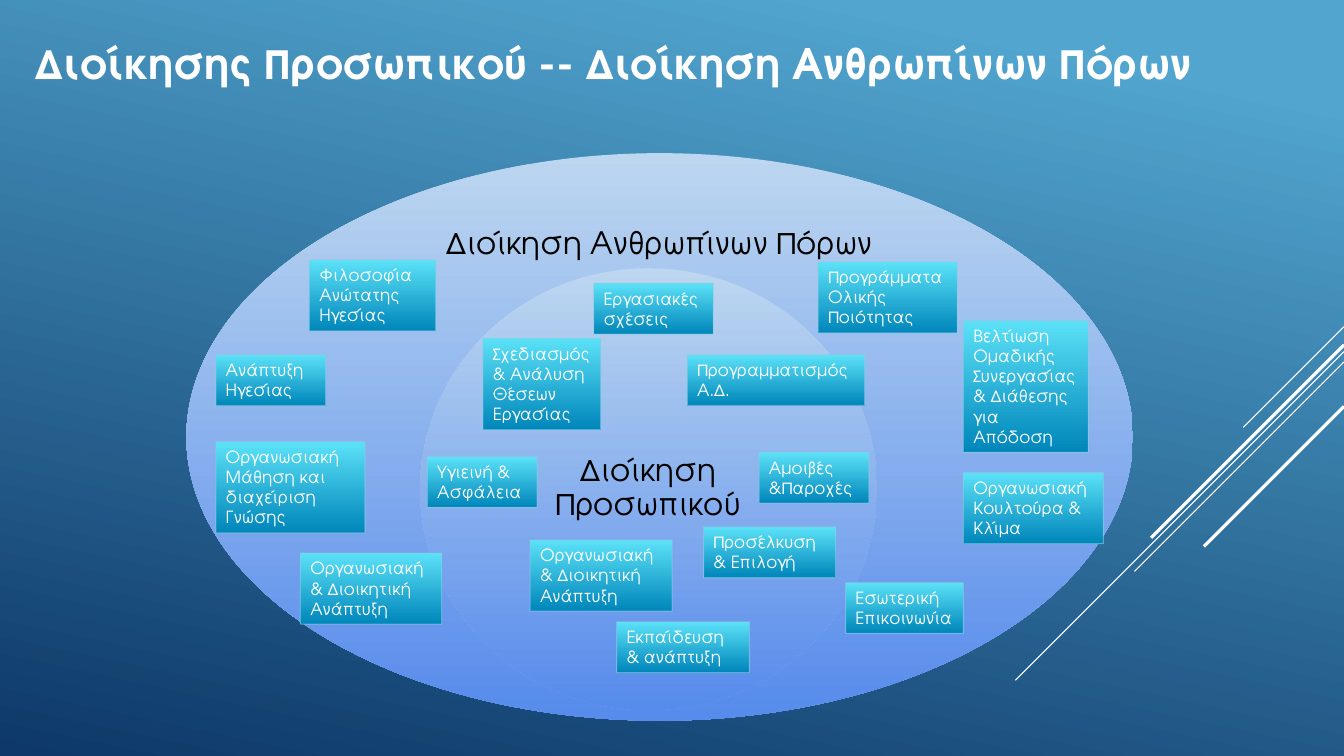
from lxml.etree import SubElement
from pptx import Presentation
from pptx.dml.color import RGBColor
from pptx.enum.shapes import MSO_CONNECTOR, MSO_SHAPE
from pptx.enum.text import MSO_ANCHOR, MSO_AUTO_SIZE, PP_ALIGN
from pptx.oxml.ns import qn
from pptx.util import Cm, Pt

SLIDE_WIDTH, SLIDE_HEIGHT = 33.87, 19.05
COLORS = {
    "sky": "51A5CF", "navy": "0D3868",
    "oval_top": "BDD7F0", "oval_bottom": "578BEC",
    "box_top": "5BE1F7", "box_bottom": "0086BA", "box_line": "89CDE3",
    "white": "FFFFFF", "black": "000000",
}

# start height on the right edge, horizontal run, weight
RAYS = [
    (8.23, 2.54, 0.75), (8.86, 8.28, 0.75), (9.12, 5.28, 0.75),
    (8.69, 4.86, 2.25), (10.24, 3.53, 2.25),
]

# left, top, width, number of text lines, wording
ACTIVITIES = [
    (7.8, 6.55, 3.18, 3, "Φιλοσοφία Ανώτατης Ηγεσίας"),
    (10.77, 11.51, 2.77, 2, "Υγιεινή & Ασφάλεια"),
    (12.17, 8.53, 2.97, 4, "Σχεδιασμός & Ανάλυση Θέσεων Εργασίας"),
    (5.44, 8.94, 2.77, 2, "Ανάπτυξη Ηγεσίας"),
    (5.44, 11.13, 3.76, 4, "Οργανωσιακή Μάθηση και διαχείριση Γνώσης"),
    (7.57, 13.94, 3.56, 3, "Οργανωσιακή & Διοικητική Ανάπτυξη"),
    (13.36, 13.61, 3.58, 3, "Οργανωσιακή & Διοικητική Ανάπτυξη"),
    (15.54, 15.67, 3.35, 2, "Εκπαίδευση & ανάπτυξη"),
    (17.73, 13.28, 3.33, 2, "Προσέλκυση & Επιλογή"),
    (19.13, 11.4, 2.77, 2, "Αμοιβές &Παροχές"),
    (17.32, 8.94, 4.47, 2, "Προγραμματισμός Α.Δ."),
    (20.62, 6.6, 3.51, 3, "Προγράμματα Ολικής Ποιότητας"),
    (21.31, 14.68, 2.97, 2, "Εσωτερική Επικοινωνία"),
    (24.28, 11.91, 3.53, 3, "Οργανωσιακή Κουλτούρα & Κλίμα"),
    (24.28, 8.08, 3.15, 6, "Βελτίωση Ομαδικής Συνεργασίας & Διάθεσης για Απόδοση"),
    (14.96, 7.14, 3.02, 2, "Εργασιακές σχέσεις"),
]


def rgb(name):
    return RGBColor.from_string(COLORS[name])


def shade(fill, first, last, angle=90, start=0):
    """Gradient fill; angle runs clockwise, 90 being top to bottom."""
    fill.gradient()
    fill.gradient_angle = 360 - angle
    for stop, name, position in zip(fill.gradient_stops, (first, last), (start, 1)):
        stop.color.rgb = rgb(name)
        stop.position = position


class DiagramSlide:
    """Holds the text style and the slide being drawn."""

    font = "TeX Gyre Adventor"

    def __init__(self, slide):
        self.slide = slide
        self.shapes = slide.shapes

    def background(self):
        shade(self.slide.background.fill, "sky", "navy", angle=102, start=0.1)

    def add_text(self, shape, wording, size, color, align=PP_ALIGN.LEFT,
                 anchor=MSO_ANCHOR.TOP, bold=False):
        frame = shape.text_frame
        frame.word_wrap = True
        frame.auto_size = MSO_AUTO_SIZE.NONE
        frame.vertical_anchor = anchor
        paragraph = frame.paragraphs[0]
        paragraph.alignment = align
        run = paragraph.add_run()
        run.text = wording
        run.font.name = self.font
        run.font.size = Pt(size)
        run.font.bold = bold
        run.font.color.rgb = rgb(color)
        return frame

    def title(self, wording, left, top, width, height):
        heading = self.shapes.title
        heading.left, heading.top = Cm(left), Cm(top)
        heading.width, heading.height = Cm(width), Cm(height)
        self.add_text(heading, wording, 30, "white", bold=True)

    def ray(self, top, run, weight):
        """Diagonal line falling at 45 degrees from the right edge."""
        line = self.shapes.add_connector(
            MSO_CONNECTOR.STRAIGHT, Cm(SLIDE_WIDTH), Cm(top),
            Cm(SLIDE_WIDTH - run), Cm(top + run))
        line.line.color.rgb = rgb("white")
        line.line.width = Pt(weight)
        SubElement(line._element.spPr, qn("a:effectLst"))

    def oval(self, left, top, width, height):
        oval = self.shapes.add_shape(
            MSO_SHAPE.OVAL, Cm(left), Cm(top), Cm(width), Cm(height))
        oval.shadow.inherit = False
        shade(oval.fill, "oval_top", "oval_bottom")
        oval.line.fill.background()

    def label(self, wording, left, top, width, height):
        label = self.shapes.add_textbox(Cm(left), Cm(top), Cm(width), Cm(height))
        frame = self.add_text(label, wording, 22, "black",
                              PP_ALIGN.CENTER, MSO_ANCHOR.MIDDLE)
        frame.margin_left = frame.margin_right = Cm(0.43)
        frame.margin_top = frame.margin_bottom = Cm(0.43)
        frame.paragraphs[0].line_spacing = 0.9

    def activity(self, left, top, width, lines, wording):
        height = 0.26 + 0.51 * lines
        box = self.shapes.add_shape(
            MSO_SHAPE.RECTANGLE, Cm(left), Cm(top), Cm(width), Cm(height))
        box.shadow.inherit = False
        shade(box.fill, "box_top", "box_bottom")
        box.line.color.rgb = rgb("box_line")
        box.line.width = Pt(0.75)
        outline = box._element.spPr.find(qn("a:ln"))
        line_color = outline.find(".//" + qn("a:srgbClr"))
        SubElement(line_color, qn("a:alpha"), val="60000")
        self.add_text(box, wording, 12, "white")


def main():
    deck = Presentation()
    deck.slide_width, deck.slide_height = Cm(SLIDE_WIDTH), Cm(SLIDE_HEIGHT)
    title_only = deck.slide_layouts[5]
    diagram = DiagramSlide(deck.slides.add_slide(title_only))
    diagram.background()
    diagram.title("Διοίκησης Προσωπικού -- Διοίκηση Ανθρωπίνων Πόρων",
                  0.64, 0.81, 31.98, 1.55)
    for ray in RAYS:
        diagram.ray(*ray)
    diagram.oval(4.7, 3.86, 23.85, 14.3)
    diagram.label("Διοίκηση Ανθρωπίνων Πόρων", 10.36, 4.95, 12.52, 2.44)
    diagram.oval(10.59, 6.76, 11.51, 11.13)
    diagram.label("Διοίκηση Προσωπικού", 12.27, 9.53, 8.13, 5.56)
    for activity in ACTIVITIES:
        diagram.activity(*activity)
    deck.save("out.pptx")


if __name__ == "__main__":
    main()
